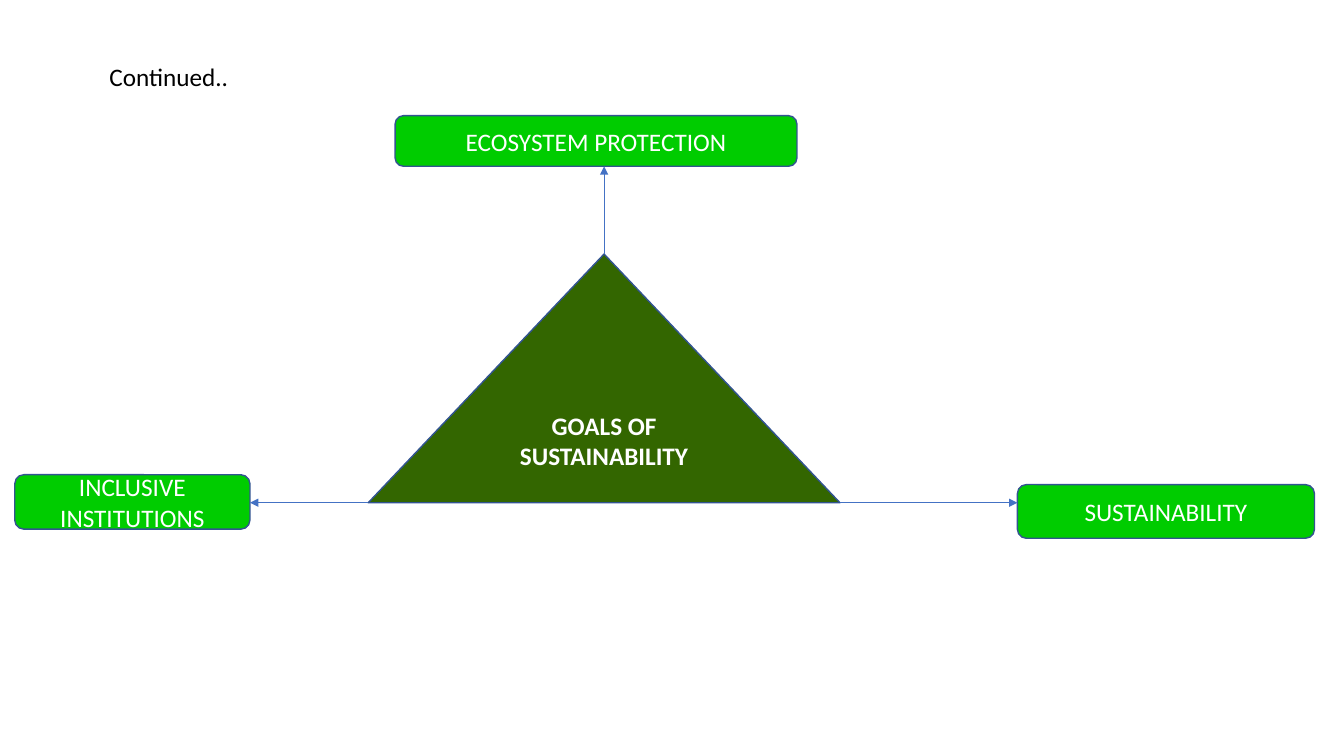
from pptx import Presentation
from pptx.dml.color import RGBColor
from pptx.enum.shapes import MSO_CONNECTOR, MSO_SHAPE
from pptx.enum.text import MSO_ANCHOR, MSO_AUTO_SIZE, PP_ALIGN
from pptx.oxml.ns import qn
from pptx.util import Inches, Pt
from lxml.etree import SubElement

HUES = {"ink": "000000", "paper": "FFFFFF", "forest": "336600",
        "leaf": "00CC00", "edge": "325491", "arrow": "4472C4"}

deck = Presentation()
deck.slide_width, deck.slide_height = Inches(13.33), Inches(7.5)
slide = deck.slides.add_slide(deck.slide_layouts[6])


def place(*shares):
    sides = (deck.slide_width, deck.slide_height) * 2
    return [round(side * share / 100) for side, share in zip(sides, shares)]


def write(shape, text, hue, bold=False):
    shape.text_frame.word_wrap = True
    para = shape.text_frame.paragraphs[0]
    run = para.add_run()
    run.text = text
    style = {"name": "Calibri", "size": Pt(18), "bold": bold}
    for key, value in style.items():
        setattr(run.font, key, value)
    run.font.color.rgb = RGBColor.from_string(HUES[hue])
    return para


title = slide.shapes.add_textbox(*place(7.4, 7.5, 19, 5.4))
write(title, "Continued..", "ink")
title.text_frame.auto_size = MSO_AUTO_SIZE.SHAPE_TO_FIT_TEXT

left, top, wide, high = 27.4, 33.6, 35.1, 32.9
mid, right, base = left + wide / 2, left + wide, top + high
eco = (29.4, 15.3, 29.9, 6.7)
sus = (75.7, 64.1, 22.1, 7.1)
inc = (1.1, 62.8, 17.5, 7.2)

goals = [
    (MSO_SHAPE.ISOSCELES_TRIANGLE, (left, top, wide, high), "forest", "GOALS OF SUSTAINABILITY", True),
    (MSO_SHAPE.ROUNDED_RECTANGLE, eco, "leaf", "ECOSYSTEM PROTECTION", False),
    (MSO_SHAPE.ROUNDED_RECTANGLE, sus, "leaf", "SUSTAINABILITY", False),
    (MSO_SHAPE.ROUNDED_RECTANGLE, inc, "leaf", "INCLUSIVE INSTITUTIONS", False),
]
for kind, area, hue, text, bold in goals:
    shape = slide.shapes.add_shape(kind, *place(*area))
    shape.shadow.inherit = False
    shape.fill.solid()
    shape.fill.fore_color.rgb = RGBColor.from_string(HUES[hue])
    shape.line.color.rgb = RGBColor.from_string(HUES["edge"])
    shape.line.width = Pt(1)
    shape.text_frame.vertical_anchor = MSO_ANCHOR.MIDDLE
    write(shape, text, "paper", bold).alignment = PP_ALIGN.CENTER

arrows = [
    (mid, top, mid, eco[1] + eco[3]),
    (left, base, inc[0] + inc[2], base),
    (right, base, sus[0], base),
]
for ends in arrows:
    arrow = slide.shapes.add_connector(MSO_CONNECTOR.STRAIGHT, *place(*ends))
    arrow.line.color.rgb = RGBColor.from_string(HUES["arrow"])
    arrow.line.width = Pt(0.5)
    SubElement(arrow.line._get_or_add_ln(), qn("a:tailEnd"), type="triangle")
    SubElement(arrow._element.spPr, qn("a:effectLst"))

deck.save("out.pptx")
